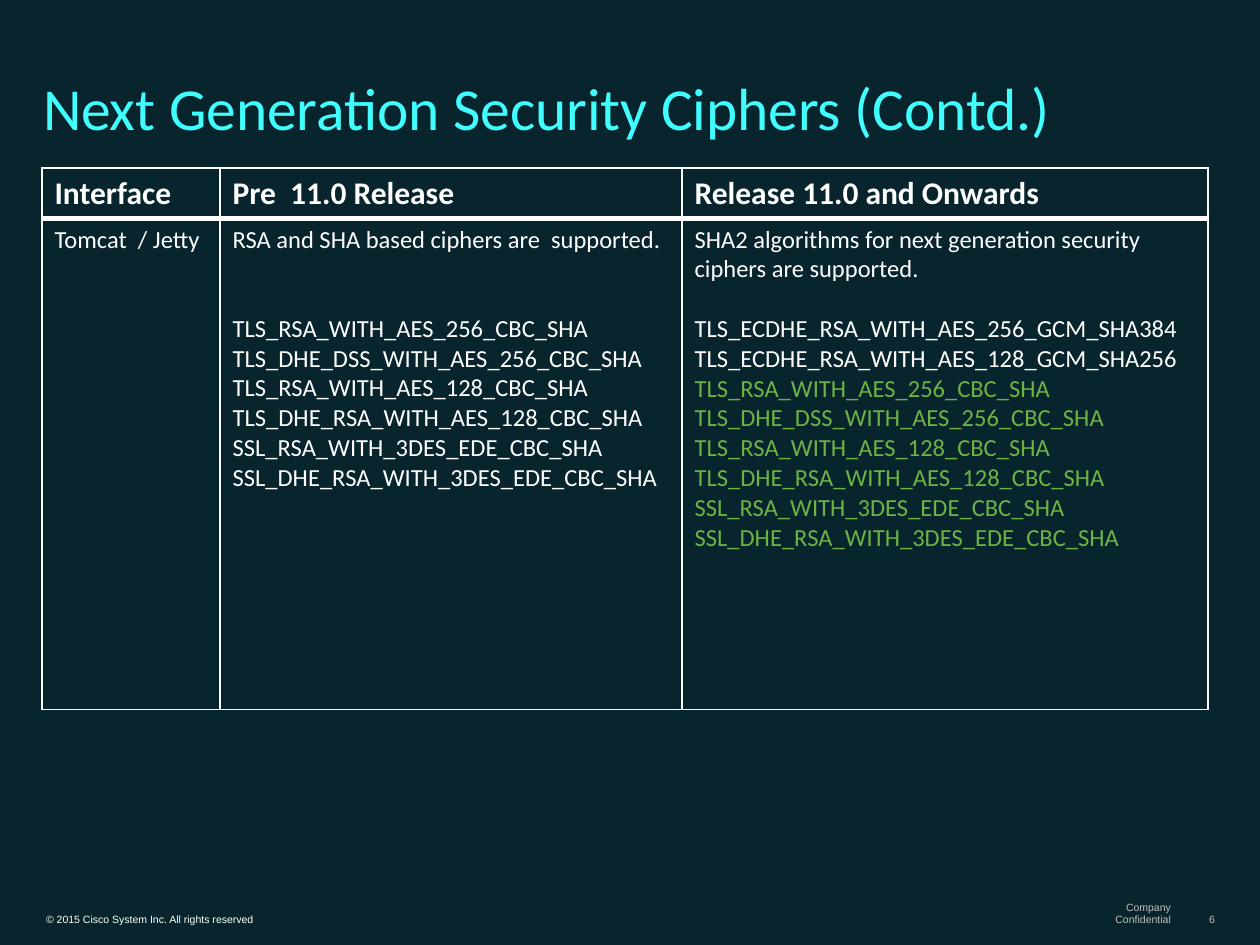
import pptx
import pptx.dml.color
import pptx.enum.text
import pptx.oxml
import pptx.oxml.ns
import pptx.util
from dataclasses import dataclass

ANCHOR = pptx.enum.text.MSO_ANCHOR
ALIGN = pptx.enum.text.PP_ALIGN
PX = 914400 // 126


@dataclass(frozen=True)
class Theme:
    background: str = "08252E"
    title: str = "40FFFE"
    text: str = "FFFFFF"
    retained: str = "6DB344"
    muted: str = "C0C0C0"
    heading_font: str = "Calibri"
    footer_font: str = "Arial"
    title_size: int = 34
    header_size: int = 18
    body_size: int = 14
    footer_size: int = 6


THEME = Theme()

TITLE = "Next Generation Security Ciphers (Contd.)"
HEADERS = ["Interface", "Pre  11.0 Release", "Release 11.0 and Onwards"]
INTERFACE = "Tomcat  / Jetty"
OLD_SUMMARY = "RSA and SHA based ciphers are  supported."
NEW_SUMMARY = "SHA2 algorithms for next generation security ciphers are supported."
OLD_CIPHERS = [
    "TLS_RSA_WITH_AES_256_CBC_SHA",
    "TLS_DHE_DSS_WITH_AES_256_CBC_SHA",
    "TLS_RSA_WITH_AES_128_CBC_SHA",
    "TLS_DHE_RSA_WITH_AES_128_CBC_SHA",
    "SSL_RSA_WITH_3DES_EDE_CBC_SHA",
    "SSL_DHE_RSA_WITH_3DES_EDE_CBC_SHA",
]
NEW_CIPHERS = [
    "TLS_ECDHE_RSA_WITH_AES_256_GCM_SHA384",
    "TLS_ECDHE_RSA_WITH_AES_128_GCM_SHA256",
]
# text, box in px, colour, alignment, wrap
FOOTERS = [
    ("© 2015 Cisco System Inc. All rights reserved", (35, 907, 471, 24),
     THEME.text, ALIGN.LEFT, True),
    ("Company Confidential", (1070, 907, 112, 24), THEME.muted, ALIGN.RIGHT, False),
    ("6", (1191, 907, 35, 24), THEME.muted, ALIGN.RIGHT, False),
]

TITLE_BOX = (32, 32, 1183, 116)
TABLE_ORIGIN = (42, 168)
COLUMN_WIDTHS = [178, 462, 526]
ROW_HEIGHTS = [50, 491]
LINE_GAP = 17  # points, one body line
THIN, THICK = 1, 3


def px(*lengths):
    return [pptx.util.Emu(length * PX) for length in lengths]


def rgb(value):
    return pptx.dml.color.RGBColor.from_string(value)


def write(paragraph, text, size, color, font=THEME.heading_font, bold=False, **layout):
    run = paragraph.add_run()
    run.text = text
    for name, value in dict(name=font, size=pptx.util.Pt(size), bold=bold).items():
        setattr(run.font, name, value)
    run.font.color.rgb = rgb(color)
    for name, value in layout.items():
        setattr(paragraph, name, value)


def add_text(slide, box, text, size, color, margins, wrap=True, **style):
    frame = slide.shapes.add_textbox(*px(*box)).text_frame
    side, edge = px(*margins)
    settings = dict(word_wrap=wrap, vertical_anchor=ANCHOR.BOTTOM, margin_left=side,
                    margin_right=side, margin_top=edge, margin_bottom=edge)
    for name, value in settings.items():
        setattr(frame, name, value)
    write(frame.paragraphs[0], text, size, color, **style)


def set_borders(cell, **widths):
    """Draw the cell's sides, given in schema order as L, R, T, B in points."""
    properties = cell._tc.get_or_add_tcPr()
    for index, (side, width) in enumerate(widths.items()):
        properties.insert(index, pptx.oxml.parse_xml(
            f'<a:ln{side} {pptx.oxml.ns.nsdecls("a")} w="{pptx.util.Pt(width)}">'
            f'<a:solidFill><a:srgbClr val="{THEME.text}"/></a:solidFill></a:ln{side}>'))


def fill_cell(cell, lines, size, bold=False):
    """Write (text, colour, points before) lines into a cell."""
    cell.fill.background()
    for index, (text, color, before) in enumerate(lines):
        frame = cell.text_frame
        paragraph = frame.add_paragraph() if index else frame.paragraphs[0]
        write(paragraph, text, size, color, bold=bold, space_before=pptx.util.Pt(before))


def cipher_lines(summary, ciphers, blank_lines):
    """Put the summary first, then the (text, colour) ciphers after a gap."""
    lines = [(summary, THEME.text, 0)]
    for index, (text, color) in enumerate(ciphers):
        lines.append((text, color, 0 if index else blank_lines * LINE_GAP))
    return lines


def add_cipher_table(slide):
    old = [(text, THEME.text) for text in OLD_CIPHERS]
    new = [(text, THEME.text) for text in NEW_CIPHERS]
    retained = [(text, THEME.retained) for text in OLD_CIPHERS]
    body = [
        [(INTERFACE, THEME.text, 0)],
        cipher_lines(OLD_SUMMARY, old, 2),
        cipher_lines(NEW_SUMMARY, new + retained, 1),
    ]
    table = slide.shapes.add_table(
        len(ROW_HEIGHTS), len(COLUMN_WIDTHS),
        *px(*TABLE_ORIGIN, sum(COLUMN_WIDTHS), sum(ROW_HEIGHTS))).table
    table.first_row = table.horz_banding = False
    for column, width in zip(table.columns, px(*COLUMN_WIDTHS)):
        column.width = width
    for row, height in zip(table.rows, px(*ROW_HEIGHTS)):
        row.height = height
    for index, (header, lines) in enumerate(zip(HEADERS, body)):
        top, bottom = table.cell(0, index), table.cell(1, index)
        fill_cell(top, [(header, THEME.text, 0)], THEME.header_size, bold=True)
        fill_cell(bottom, lines, THEME.body_size)
        set_borders(top, L=THIN, R=THIN, T=THIN, B=THICK)
        set_borders(bottom, L=THIN, R=THIN, T=THICK, B=THIN)


def main():
    presentation = pptx.Presentation()
    presentation.slide_width, presentation.slide_height = px(1260, 945)
    slide = presentation.slides.add_slide(presentation.slide_layouts[6])
    slide.background.fill.solid()
    slide.background.fill.fore_color.rgb = rgb(THEME.background)

    for text, box, color, alignment, wrap in FOOTERS:
        add_text(slide, box, text, THEME.footer_size, color, (11, 5), wrap,
                 font=THEME.footer_font, alignment=alignment)
    add_text(slide, TITLE_BOX, TITLE, THEME.title_size, THEME.title, (11, 6),
             line_spacing=0.8)
    add_cipher_table(slide)
    presentation.save("out.pptx")


if __name__ == "__main__":
    main()
